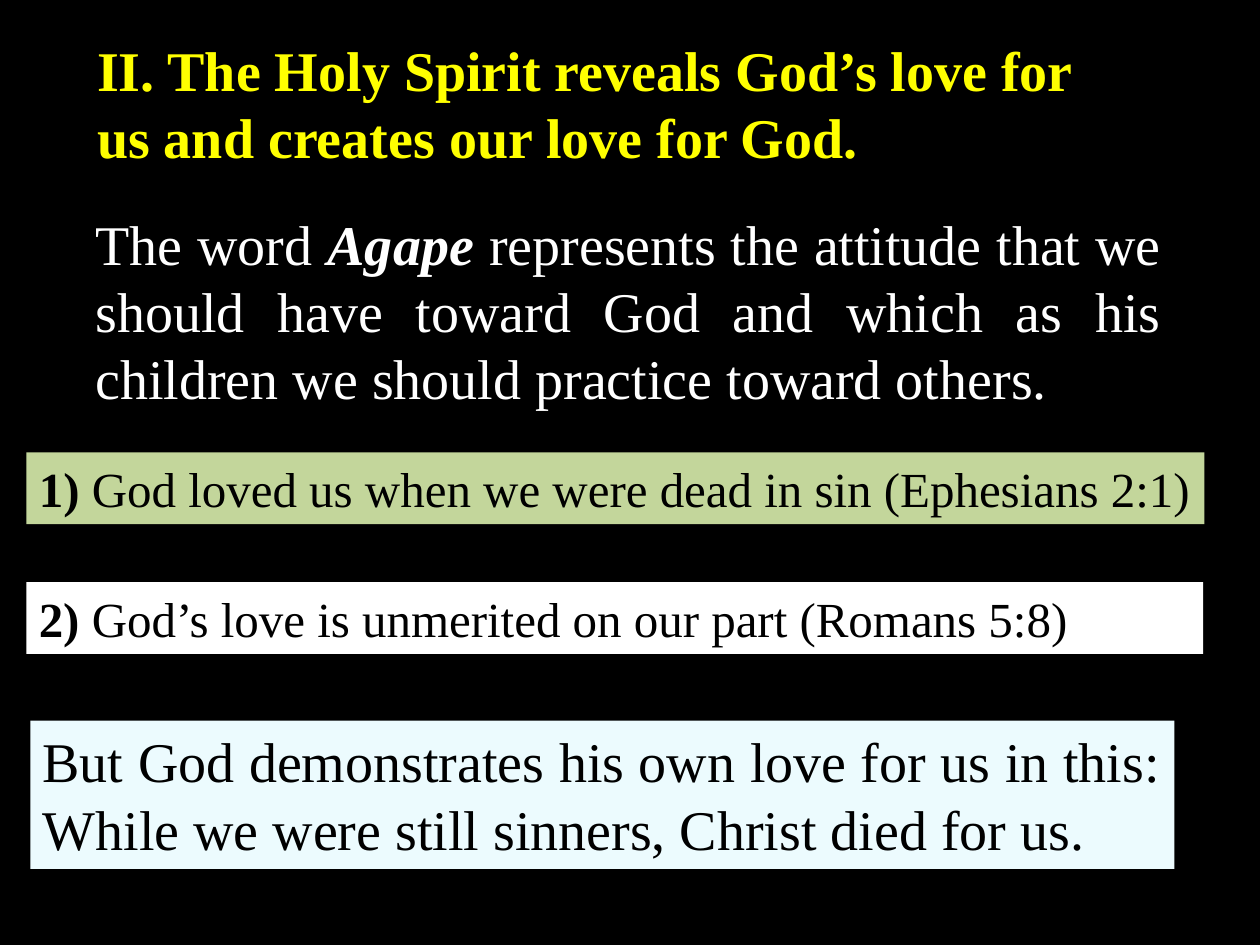
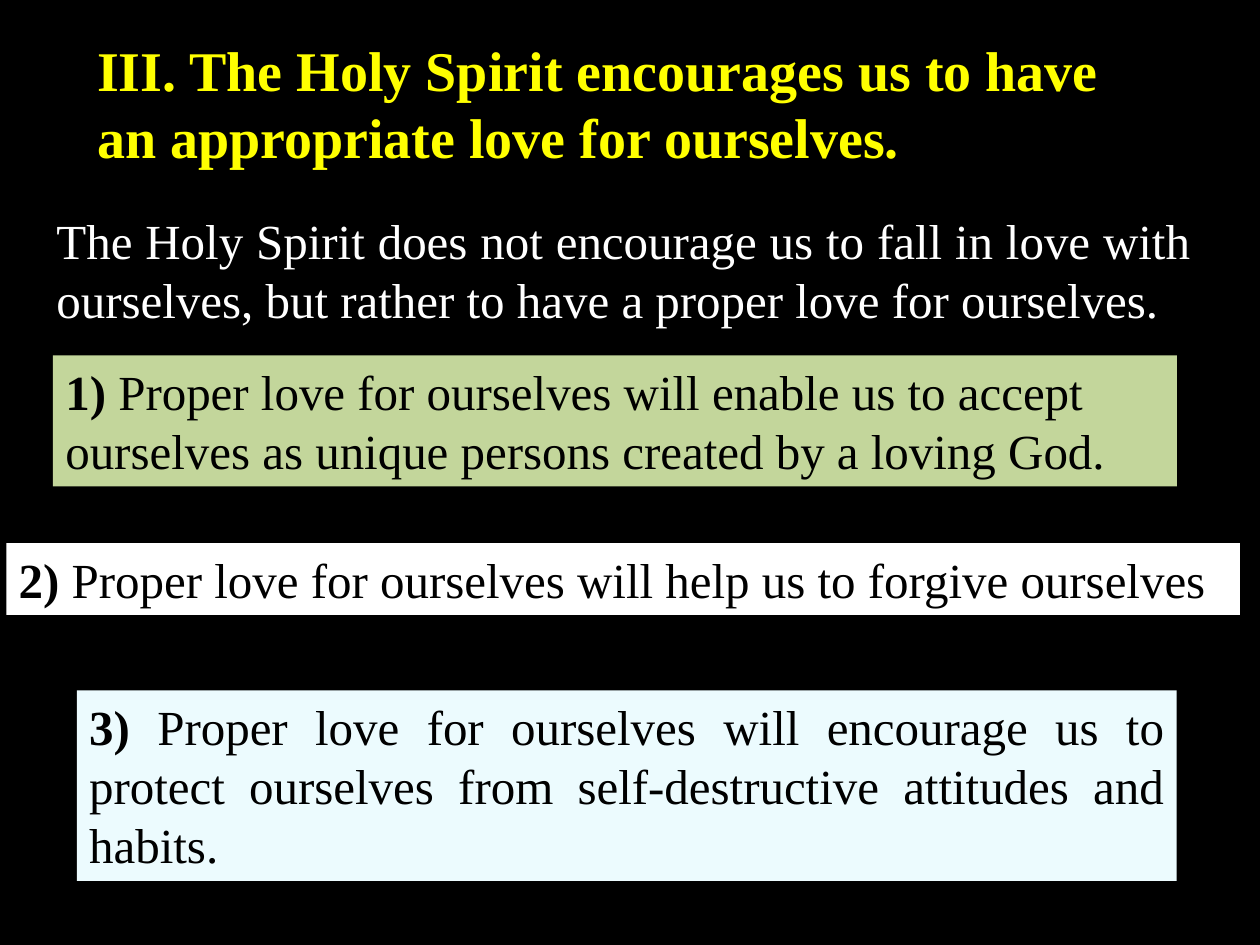
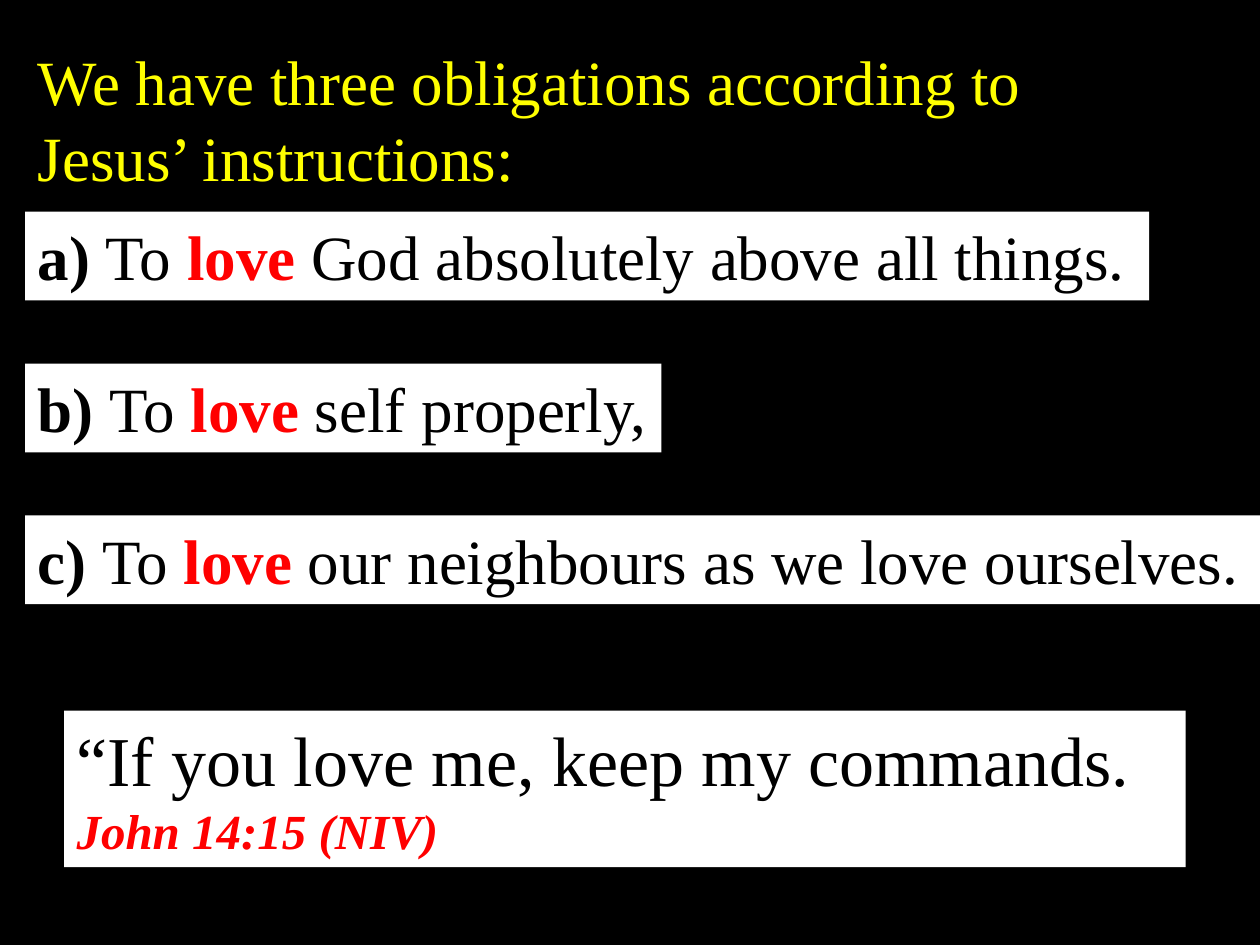
from collections import namedtuple

from pptx import Presentation
from pptx.dml.color import RGBColor
from pptx.enum.shapes import MSO_SHAPE
from pptx.enum.text import MSO_ANCHOR, MSO_AUTO_SIZE, PP_ALIGN
from pptx.util import Inches, Pt

FONT = "Times New Roman"
BLACK, WHITE, YELLOW, RED = "000000", "FFFFFF", "FFFF00", "FF0000"
GREEN, PALE_BLUE = "C3D69B", "ECFBFE"
PANEL_FILLS = (GREEN, WHITE, PALE_BLUE)
LEFT, JUSTIFY = PP_ALIGN.LEFT, PP_ALIGN.JUSTIFY
INSET = 0.05        # space above and below the text, in inches
LINE_SPACING = 1.21  # line height as a multiple of the text size

Box = namedtuple("Box", "left top width height")
Run = namedtuple("Run", "text color bold italic", defaults=(None, False, False))
Line = namedtuple("Line", "runs size rows", defaults=(1,))
Panel = namedtuple("Panel", "place line align", defaults=(LEFT,))

PAGE = Box(0, 0, 10, 7.5)


def rgb(color):
    return RGBColor.from_string(color)


def text_box_in(area, place, lines):
    """Turn left, top and width in percent of the area into a box as tall as its lines."""
    left, top, width = place
    points = sum(line.size * line.rows for line in lines)
    return Box(
        area.left + area.width * left / 100,
        area.top + area.height * top / 100,
        area.width * width / 100,
        2 * INSET + points * LINE_SPACING / 72,
    )


def write_text(shape, lines, color, align=LEFT):
    frame = shape.text_frame
    frame.word_wrap = True
    frame.auto_size = MSO_AUTO_SIZE.NONE
    frame.vertical_anchor = MSO_ANCHOR.TOP
    frame.margin_top = frame.margin_bottom = Inches(INSET)
    for index, line in enumerate(lines):
        paragraph = frame.add_paragraph() if index else frame.paragraphs[0]
        paragraph.alignment = align
        for part in line.runs:
            run = paragraph.add_run()
            run.text = part.text
            run.font.name = FONT
            run.font.size = Pt(line.size)
            run.font.bold = part.bold
            run.font.italic = part.italic
            run.font.color.rgb = rgb(part.color or color)


def add_title_slide_frame(presentation, area, place, line):
    """Add a slide and set its title."""
    slide = presentation.slides.add_slide(presentation.slide_layouts[5])
    title = slide.shapes.title
    box = text_box_in(area, place, [line])
    title.left, title.top, title.width, title.height = map(Inches, box)
    write_text(title, [line], YELLOW)
    return slide


def add_plain_text(slide, area, panel):
    box = text_box_in(area, panel.place, [panel.line])
    shape = slide.shapes.add_textbox(*map(Inches, box))
    write_text(shape, [panel.line], WHITE, panel.align)


def add_panel(slide, area, place, lines, fill, align=LEFT):
    """Add a filled rectangle with black text."""
    box = text_box_in(area, place, lines)
    shape = slide.shapes.add_shape(MSO_SHAPE.RECTANGLE, *map(Inches, box))
    shape.shadow.inherit = False
    shape.fill.solid()
    shape.fill.fore_color.rgb = rgb(fill)
    shape.line.fill.background()
    write_text(shape, lines, BLACK, align)


def add_point_slide(presentation, area, heading, intro, panels):
    """A numbered heading, an introduction and three coloured panels."""
    title = Line([Run(heading, bold=True)], 32, 2)
    slide = add_title_slide_frame(presentation, area, (6.7, 3.07, 84.3), title)
    add_plain_text(slide, area, intro)
    for panel, fill in zip(panels, PANEL_FILLS):
        add_panel(slide, area, panel.place, [panel.line], fill, panel.align)


def add_obligations_slide(presentation, area, heading, obligations, verse):
    """A heading, evenly spaced lettered panels and a closing verse."""
    title = Line([Run(heading)], 36, 2)
    slide = add_title_slide_frame(presentation, area, (2, 3.87, 89), title)
    first_row, row_step = 22.4, 16.07
    for index, (letter, ending, width) in enumerate(obligations):
        runs = [Run(f"{letter}) ", bold=True), Run("To "),
                Run("love", RED, bold=True), Run(ending)]
        place = (2, first_row + index * row_step, width)
        add_panel(slide, area, place, [Line(runs, 36)], WHITE)
    add_panel(slide, area, (5.1, 75.2, 89), verse, WHITE, JUSTIFY)


def numbered(number, text, rows=1):
    return Line([Run(f"{number}) ", bold=True), Run(text)], 28, rows)


def main():
    presentation = Presentation()
    presentation.slide_width = Inches(PAGE.width)
    presentation.slide_height = Inches(PAGE.height)
    background = presentation.slide_master.background.fill
    background.solid()
    background.fore_color.rgb = rgb(BLACK)

    # Love for God
    add_point_slide(
        presentation, PAGE,
        "II. The Holy Spirit reveals God’s love for us and creates our love for God.",
        Panel((6.6, 21.47, 86.6), Line([
            Run("The word "),
            Run("Agape ", bold=True, italic=True),
            Run("represents the attitude that we should have toward God and "
                "which as his children we should practice toward others."),
        ], 32, 3), JUSTIFY),
        [
            Panel((2.1, 47.87, 93.5),
                  numbered(1, "God loved us when we were dead in sin (Ephesians 2:1)")),
            Panel((2.1, 61.6, 93.4),
                  numbered(2, "God’s love is unmerited on our part (Romans 5:8)")),
            Panel((2.4, 76.27, 90.8), Line([
                Run("But God demonstrates his own love for us in this: "
                    "While we were still sinners, Christ died for us."),
            ], 32, 2), JUSTIFY),
        ],
    )

    # Love for ourselves
    add_point_slide(
        presentation, PAGE,
        "III. The Holy Spirit encourages us to have an appropriate love for ourselves.",
        Panel((3.5, 21.6, 92), Line([
            Run("The Holy Spirit does not encourage us to fall in love with "
                "ourselves, but rather to have a proper love for ourselves."),
        ], 28, 2), JUSTIFY),
        [
            Panel((4.2, 37.6, 89.2), numbered(
                1, "Proper love for ourselves will enable us to accept "
                   "ourselves as unique persons created by a loving God.", 2)),
            Panel((0.5, 57.47, 97.9), numbered(
                2, "Proper love for ourselves will help us to forgive ourselves")),
            Panel((6.1, 73.07, 87.3), numbered(
                3, "Proper love for ourselves will encourage us to protect "
                   "ourselves from self-destructive attitudes and habits.", 3), JUSTIFY),
        ],
    )

    # Three obligations
    add_obligations_slide(
        presentation, PAGE,
        "We have three obligations according to Jesus’ instructions:",
        [
            ("a", " God absolutely above all things.", 89.2),
            ("b", " self properly,", 50.5),
            ("c", " our neighbours as we love ourselves.", 98),
        ],
        [
            Line([Run("“If you love me, keep my commands.")], 40),
            Line([Run("John 14:15 (NIV)", RED, bold=True, italic=True)], 28),
        ],
    )

    presentation.save("out.pptx")


if __name__ == "__main__":
    main()
